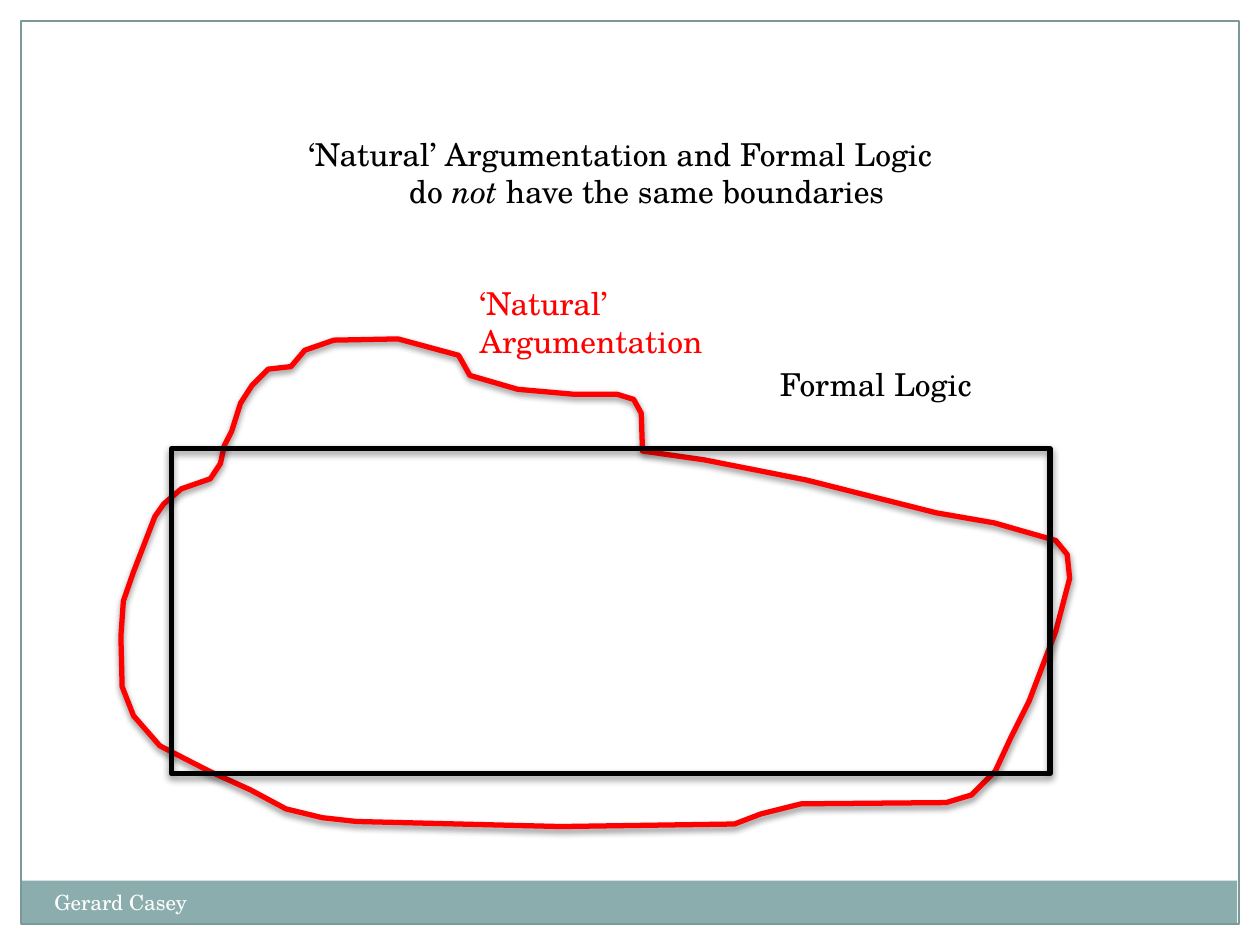
from lxml.etree import SubElement
from pptx import Presentation
from pptx.dml.color import RGBColor as Color
from pptx.enum.shapes import MSO_SHAPE as Shape
from pptx.enum.text import PP_ALIGN as Align
from pptx.oxml.ns import qn
from pptx.util import Pt

FONT = "TeX Gyre Schola"
BLACK, RED, WHITE = "000000", "FF0000", "FFFFFF"

deck = Presentation()
deck.slide_width, deck.slide_height = Pt(720), Pt(540)
slide = deck.slides.add_slide(deck.slide_layouts[6])
shapes = slide.shapes


def add_text(left, top, width, height, lines, size, color):
    """Add a wrapped text box; each line is a list of (text, italic) spans."""
    box = shapes.add_textbox(Pt(left), Pt(top), Pt(width), Pt(height))
    frame = box.text_frame
    frame.word_wrap = True
    for index, spans in enumerate(lines):
        para = frame.add_paragraph() if index else frame.paragraphs[0]
        para.font.name, para.font.size = FONT, Pt(size)
        para.font.color.rgb = Color.from_string(color)
        for text, italic in spans:
            span = para.add_run()
            span.text = text
            if italic:
                span.font.italic = True
    return frame


def style_outline(shape, color, width, shadow):
    """Leave the shape unfilled, with a coloured line and an optional soft shadow."""
    shape.fill.background()
    shape.line.color.rgb = Color.from_string(color)
    shape.line.width = Pt(width)
    shape.shadow.inherit = False
    if shadow:
        effects = shape._element.spPr.find(qn("a:effectLst"))
        outer = SubElement(effects, qn("a:outerShdw"), blurRad=str(Pt(4)),
                           dist=str(Pt(2)), dir="5400000", rotWithShape="0")
        tint = SubElement(outer, qn("a:srgbClr"), val=BLACK)
        SubElement(tint, qn("a:alpha"), val="45000")


# Footer band and page frame
band = shapes.add_shape(Shape.RECTANGLE, Pt(11.5), Pt(503.3), Pt(695.5), Pt(24.5))
band.shadow.inherit = False
band.fill.solid()
band.fill.fore_color.rgb = Color.from_string("8CADAE")
band.line.fill.background()
page_frame = shapes.add_shape(Shape.RECTANGLE, Pt(12), Pt(12), Pt(696), Pt(516))
style_outline(page_frame, "7C999A", 0.75, shadow=False)

# Irregular boundary of natural argumentation, in hundredths of an inch (0.72 pt)
boundary = [
    (231, 291), (213, 293), (200, 306), (191, 320), (184, 342), (178, 354),
    (175, 368), (167, 380), (144, 388), (130, 400), (123, 410), (106, 454),
    (98, 477), (96, 505), (97, 545), (106, 568), (127, 592), (166, 612),
    (199, 627), (227, 642), (256, 649), (283, 652), (445, 656), (583, 654),
    (604, 646), (636, 638), (751, 637), (771, 631), (790, 612), (803, 584),
    (817, 556), (838, 501), (849, 459), (847, 440), (838, 429), (789, 415),
    (743, 407), (640, 381), (559, 365), (510, 358), (509, 328), (503, 317),
    (490, 313), (456, 313), (411, 309), (373, 298), (364, 282), (316, 269),
    (265, 270), (242, 278),
]
builder = shapes.build_freeform(*boundary[0], scale=Pt(0.72))
builder.add_line_segments(boundary[1:], close=True)
natural_argumentation = builder.convert_to_shape()
style_outline(natural_argumentation, RED, 3, shadow=True)

formal_logic = shapes.add_shape(Shape.RECTANGLE, Pt(98), Pt(256.3), Pt(502), Pt(185.8))
style_outline(formal_logic, BLACK, 3, shadow=True)

# Labels, heading and footer name
add_text(267, 159, 176.5, 51, [[("‘Natural’ Argumentation", False)]], 18, RED)
add_text(438.5, 205.2, 161.5, 51, [[("Formal Logic", False)]], 18, BLACK)
heading = add_text(167, 73.4, 375, 51, [
    [("‘Natural’ Argumentation and Formal Logic", False)],
    [("do ", False), ("not ", True), ("have the same boundaries", False)],
], 18, BLACK)
for para in heading.paragraphs:
    para.alignment = Align.CENTER
heading.paragraphs[1]._p.get_or_add_pPr().set("marL", str(Pt(30)))
add_text(24, 504.7, 282, 29, [[("Gerard Casey", False)]], 12, WHITE)

deck.save("out.pptx")
